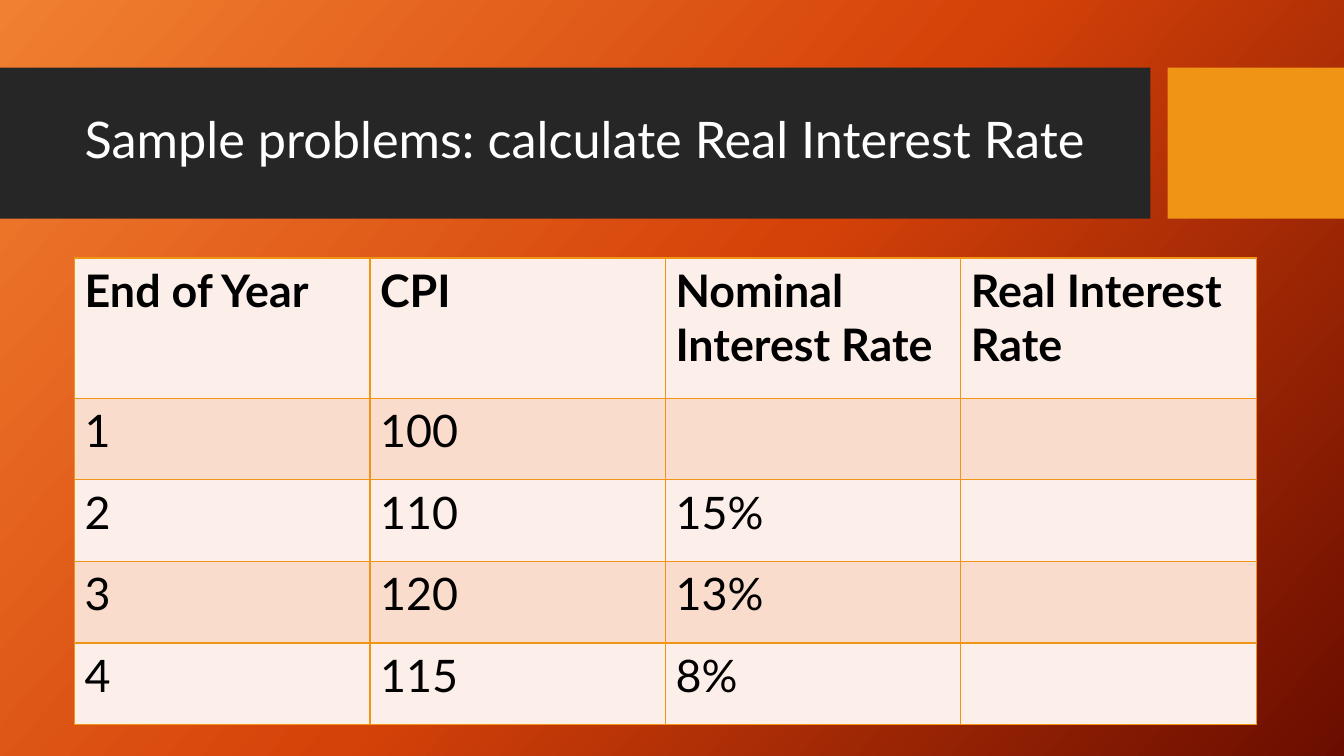
from dataclasses import dataclass
from typing import Any

from lxml.etree import SubElement
from pptx import Presentation
from pptx.dml.color import RGBColor
from pptx.enum.shapes import MSO_SHAPE
from pptx.enum.text import MSO_ANCHOR, MSO_AUTO_SIZE, PP_ALIGN
from pptx.oxml.ns import qn
from pptx.util import Inches, Pt


@dataclass(frozen=True)
class Theme:
    font: str = "Lato"
    dark: str = "262626"
    gold: str = "F09415"
    white: str = "FFFFFF"
    black: str = "000000"
    bands: tuple[str, ...] = ("FCEEE8", "F9DCCC")
    glow: tuple[tuple[int, str], ...] = ((0, "F18031"), (50, "D54209"), (100, "6A0D00"))
    angle: int = 42
    title: int = 36
    body: int = 32
    rule: float = 1


@dataclass(frozen=True)
class Bar:
    left: float
    width: float
    fill: str


THEME = Theme()
BARS = (Bar(0, 11.41, THEME.dark), Bar(11.58, 1.75, THEME.gold))
ROWS = (
    ("End of Year", "CPI", "Nominal Interest Rate", "Real Interest Rate"),
    ("1", "100", "", ""),
    ("2", "110", "15%", ""),
    ("3", "120", "13%", ""),
    ("4", "115", "8%", ""),
)
HEAD, ROW, COL = 1.39, 0.81, 2.93


def write(frame: Any, text: str, *, size: int, color: str,
          bold: bool = False, spacing: float = 1.0) -> None:
    para = frame.paragraphs[0]
    para.alignment = PP_ALIGN.LEFT
    para.line_spacing = spacing
    para.font.size = Pt(size)
    if text:
        run = para.add_run()
        run.text = text
        run.font.name = THEME.font
        run.font.size = Pt(size)
        run.font.bold = bold
        run.font.color.rgb = RGBColor.from_string(color)


def paint(slide: Any) -> None:
    fill = slide.background.fill
    fill.gradient()
    fill.gradient_angle = 360 - THEME.angle
    stops = slide.element.find(".//" + qn("a:gsLst"))
    for stop in list(stops):
        stops.remove(stop)
    for place, color in THEME.glow:
        stop = SubElement(stops, qn("a:gs"), pos=str(place * 1000))
        SubElement(stop, qn("a:srgbClr"), val=color)


def add_bar(slide: Any, bar: Bar) -> None:
    shape = slide.shapes.add_shape(MSO_SHAPE.RECTANGLE, Inches(bar.left), Inches(0.67),
                                   Inches(bar.width), Inches(1.5))
    shape.shadow.inherit = False
    shape.fill.solid()
    shape.fill.fore_color.rgb = RGBColor.from_string(bar.fill)
    shape.line.fill.background()


def add_title(slide: Any, text: str) -> None:
    title = slide.shapes.title
    title.left, title.top = Inches(0.74), Inches(0.82)
    title.width, title.height = Inches(10.51), Inches(1.18)
    frame = title.text_frame
    frame.word_wrap = True
    frame.auto_size = MSO_AUTO_SIZE.NONE
    frame.vertical_anchor = MSO_ANCHOR.MIDDLE
    write(frame, text, size=THEME.title, color=THEME.white, spacing=0.9)
    # Bring the title in front of the bars
    slide.shapes.element.append(title.element)


def style(cell: Any, fill: str) -> None:
    props = cell._tc.get_or_add_tcPr()
    for side in ("lnL", "lnR", "lnT", "lnB"):
        line = SubElement(props, qn("a:" + side), w=str(Pt(THEME.rule)))
        SubElement(SubElement(line, qn("a:solidFill")), qn("a:srgbClr"), val=THEME.gold)
    cell.fill.solid()
    cell.fill.fore_color.rgb = RGBColor.from_string(fill)


def add_rates(slide: Any) -> None:
    count, wide = len(ROWS), len(ROWS[0])
    table = slide.shapes.add_table(count, wide, Inches(0.74), Inches(2.56), Inches(COL * wide),
                                   Inches(HEAD + ROW * (count - 1))).table
    for col in table.columns:
        col.width = Inches(COL)
    for i, texts in enumerate(ROWS):
        table.rows[i].height = Inches(ROW if i else HEAD)
        for j, text in enumerate(texts):
            cell = table.cell(i, j)
            style(cell, THEME.bands[i % 2])
            write(cell.text_frame, text, size=THEME.body, color=THEME.black, bold=i == 0)


def main() -> None:
    deck = Presentation()
    deck.slide_width, deck.slide_height = Inches(13.33), Inches(7.5)
    slide = deck.slides.add_slide(deck.slide_layouts[5])
    # Backdrop
    paint(slide)
    for bar in BARS:
        add_bar(slide, bar)
    # Content
    add_title(slide, "Sample problems: calculate Real Interest Rate")
    add_rates(slide)
    deck.save("out.pptx")


if __name__ == "__main__":
    main()
